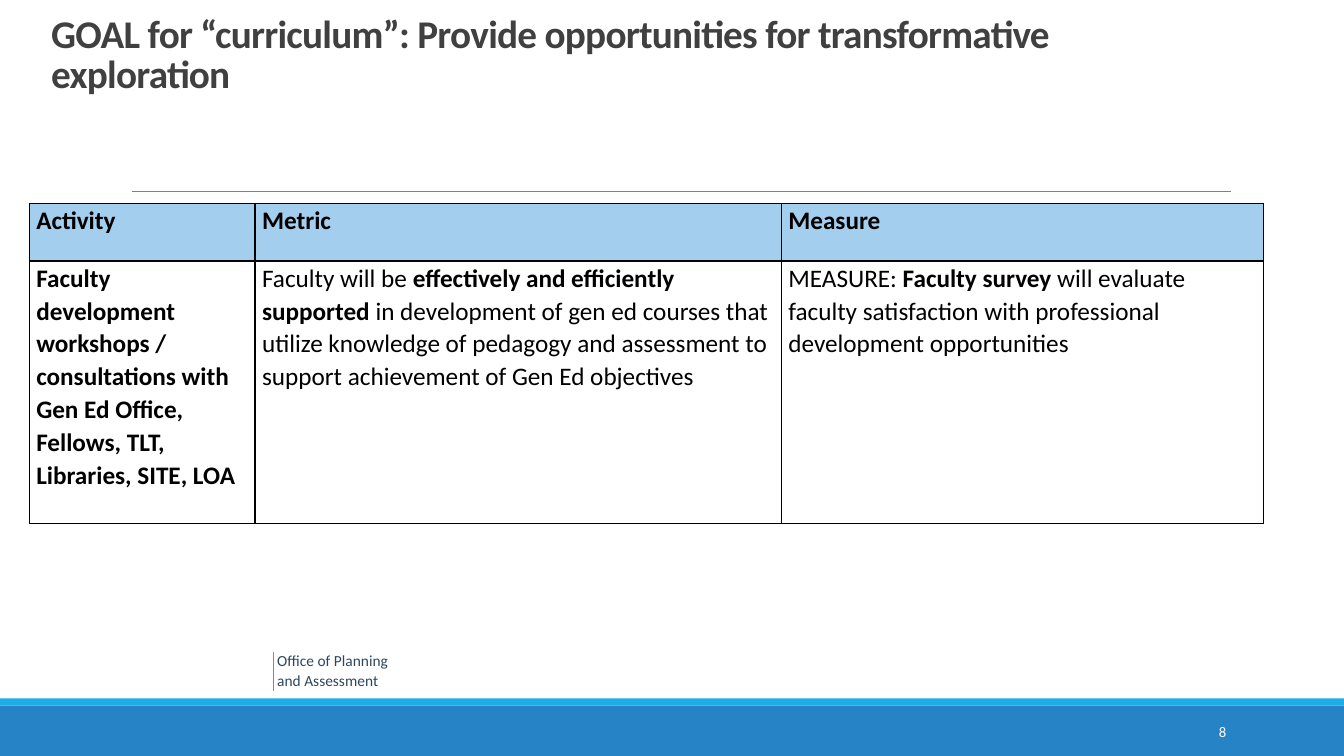
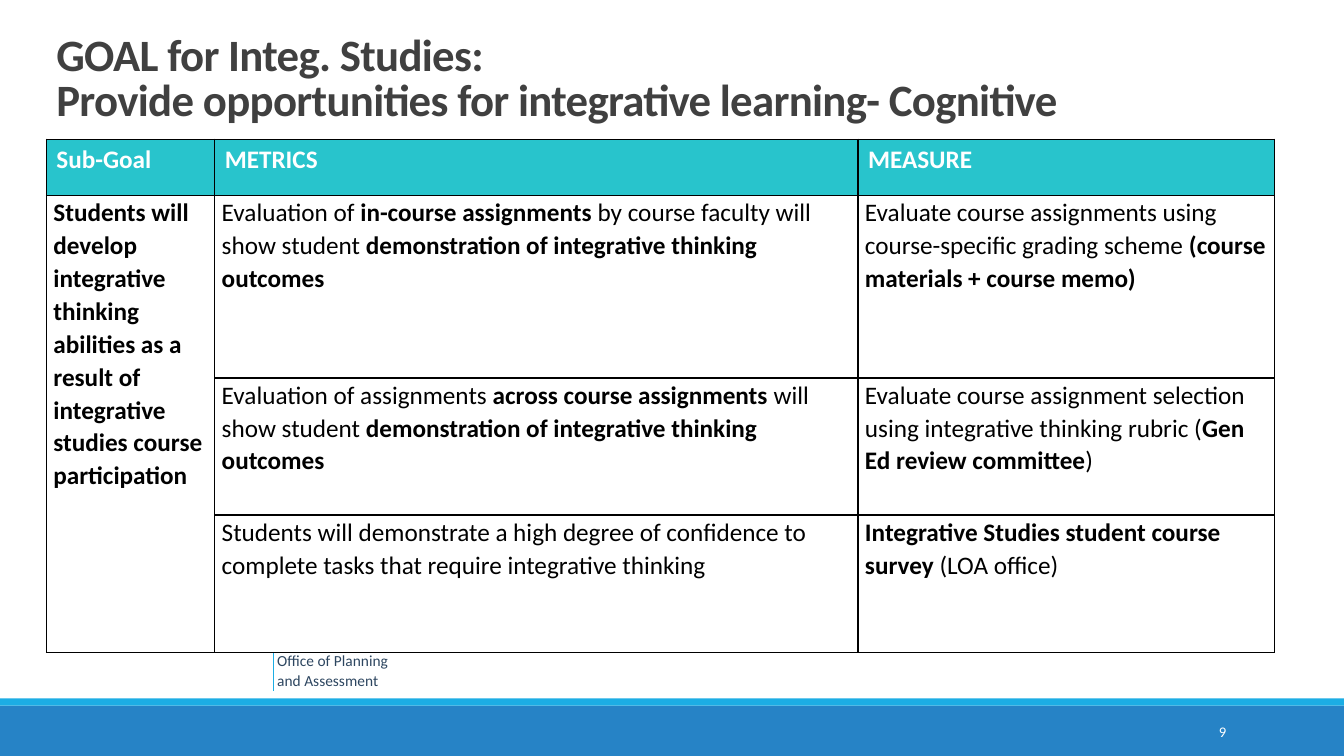
from lxml import etree
from pptx import Presentation
from pptx import util as u
from pptx.dml.color import RGBColor
from pptx.enum import shapes, text
from pptx.oxml import ns

FONT = "Calibri"
COLORS = {
    "band": "2683C6", "accent": "1CADE4", "rule": "808080", "footer": "2D4660",
    "title": "404040", "black": "000000", "white": "FFFFFF",
    "sky": "A3CEED", "teal": "28C4CC",
}
FOOTER = "Office of Planning\vand Assessment"
DEFAULT_MARGINS = (0.1, 0.05)
TIGHT_MARGINS = (0.07, 0)

# Content: **double stars** mark bold words, None continues the cell above
SLIDES = [
    {
        "number": 8,
        "title": "GOAL for “curriculum”: Provide opportunities for transformative exploration",
        "title_box": (0.41, 0.31, 11.79, 0.7),
        "title_size": 28,
        "table_at": (0.29, 2.02),
        "columns": (2.24, 5.22, 4.78),
        "heights": (0.57, 2.6),
        "header": {"fill": "sky", "color": "black", "margins": TIGHT_MARGINS, "spacing": 1.07},
        "rows": [
            ("**Activity**", "**Metric**", "**Measure**"),
            ("**Faculty development workshops / consultations with Gen Ed Office, "
             "Fellows, TLT, Libraries, SITE, LOA**",
             "Faculty will be **effectively and efficiently supported **in development of gen ed "
             "courses that utilize knowledge of pedagogy and assessment to support achievement "
             "of Gen Ed objectives",
             "MEASURE: **Faculty survey **will evaluate faculty satisfaction with professional "
             "development opportunities"),
        ],
    },
    {
        "number": 9,
        "title": "GOAL for Integ. Studies: \vProvide opportunities for integrative learning- Cognitive",
        "title_box": (0.46, 0.29, 12.18, 1.01),
        "title_size": 32,
        "table_at": (0.46, 1.38),
        "columns": (1.67, 6.38, 4.13),
        "heights": (0.56, 1.81, 1.36, 1.36),
        "header": {"fill": "teal", "color": "white", "margins": DEFAULT_MARGINS, "spacing": 1.0},
        "rows": [
            ("**Sub-Goal**", "**METRICS**", "**MEASURE**"),
            ("**Students will develop integrative thinking abilities as a result of "
             "integrative studies course participation**",
             "Evaluation of** in-course assignments **by course faculty will show student "
             "**demonstration of integrative thinking outcomes**",
             "Evaluate course assignments using course-specific grading scheme "
             "**(course materials + course memo)**"),
            (None,
             "Evaluation of assignments **across course assignments **will show student "
             "**demonstration of integrative thinking outcomes**",
             "Evaluate course assignment selection using integrative thinking rubric "
             "(**Gen Ed review committee**)"),
            (None,
             "Students will demonstrate a high degree of confidence to complete tasks that "
             "require integrative thinking",
             "**Integrative Studies student course survey **(LOA office)"),
        ],
    },
]
BODY = {"fill": "white", "color": "black", "margins": TIGHT_MARGINS, "spacing": 1.07}


def rgb(name):
    return RGBColor.from_string(COLORS[name])


def style(paragraph, size, color, spacing=1.0, align=text.PP_ALIGN.LEFT):
    paragraph.alignment = align
    paragraph.line_spacing = spacing
    font = paragraph.font
    font.name, font.size = FONT, u.Pt(size)
    font.color.rgb = rgb(color)
    return font


def add_band(slide, top, height, color):
    band = slide.shapes.add_shape(shapes.MSO_SHAPE.RECTANGLE, 0, u.Inches(top),
                                  u.Inches(13.33), u.Inches(height))
    band.shadow.inherit = False
    band.fill.solid()
    band.fill.fore_color.rgb = rgb(color)
    band.line.fill.background()


def add_line(slide, start, end, color, width):
    line = slide.shapes.add_connector(shapes.MSO_CONNECTOR.STRAIGHT,
                                      *map(u.Inches, start + end))
    line.line.color.rgb = rgb(color)
    line.line.width = u.Pt(width)
    etree.SubElement(line._element.spPr, ns.qn("a:effectLst"))


def add_text(slide, box, words, anchor, margins=DEFAULT_MARGINS):
    frame = slide.shapes.add_textbox(*map(u.Inches, box)).text_frame
    frame.word_wrap = True
    frame.vertical_anchor = anchor
    frame.margin_left = frame.margin_right = u.Inches(margins[0])
    frame.margin_top = frame.margin_bottom = u.Inches(margins[1])
    frame.text = words
    return frame.paragraphs[0]


def add_frame(slide, number):
    """Bands, rule, footer mark and slide number."""
    add_band(slide, 7, 0.5, "band")
    add_band(slide, 6.93, 0.07, "accent")
    add_line(slide, (1.31, 1.9), (12.21, 1.9), "rule", 0.5)
    footer = add_text(slide, (2.75, 6.45, 2.56, 0.4), FOOTER, text.MSO_ANCHOR.TOP, (0, 0))
    style(footer, 11, "footer", 1.07)
    add_line(slide, (2.71, 6.47), (2.71, 6.86), "accent", 1)
    page = add_text(slide, (10.83, 7.06, 1.43, 0.4), str(number), text.MSO_ANCHOR.MIDDLE)
    style(page, 10.5, "white", align=text.PP_ALIGN.RIGHT)


def add_title(slide, words, box, size):
    title = add_text(slide, box, words, text.MSO_ANCHOR.BOTTOM)
    font = style(title, size, "title", 0.85)
    font.bold = True
    font._rPr.set("spc", "-50")


def add_borders(cell):
    properties = cell._tc.get_or_add_tcPr()
    for side in ("lnL", "lnR", "lnT", "lnB"):
        border = etree.SubElement(properties, ns.qn(f"a:{side}"), w=str(u.Pt(1)))
        fill = etree.SubElement(border, ns.qn("a:solidFill"))
        etree.SubElement(fill, ns.qn("a:srgbClr"), val=COLORS["black"])


def fill_cell(cell, words, look):
    add_borders(cell)
    cell.fill.solid()
    cell.fill.fore_color.rgb = rgb(look["fill"])
    cell.margin_left = cell.margin_right = u.Inches(look["margins"][0])
    cell.margin_top = cell.margin_bottom = u.Inches(look["margins"][1])
    paragraph = cell.text_frame.paragraphs[0]
    style(paragraph, 18, look["color"], look["spacing"])
    for index, part in enumerate((words or "").split("**")):
        if part:
            run = paragraph.add_run()
            run.text = part
            run.font.bold = index % 2 == 1


def add_goal_table(slide, content):
    rows, columns, heights = content["rows"], content["columns"], content["heights"]
    left, top = content["table_at"]
    box = (left, top, sum(columns), sum(heights))
    table = slide.shapes.add_table(len(rows), len(columns), *map(u.Inches, box)).table
    for column, width in zip(table.columns, columns):
        column.width = u.Inches(width)
    for row, height in zip(table.rows, heights):
        row.height = u.Inches(height)
    for r, row in enumerate(rows):
        for c, words in enumerate(row):
            fill_cell(table.cell(r, c), words, BODY if r else content["header"])
    if rows[-1][0] is None:
        table.cell(1, 0).merge(table.cell(len(rows) - 1, 0))


def main():
    presentation = Presentation()
    presentation.slide_width, presentation.slide_height = u.Inches(13.33), u.Inches(7.5)
    for content in SLIDES:
        slide = presentation.slides.add_slide(presentation.slide_layouts[6])
        add_frame(slide, content["number"])
        add_title(slide, content["title"], content["title_box"], content["title_size"])
        add_goal_table(slide, content)
    presentation.save("out.pptx")


if __name__ == "__main__":
    main()
